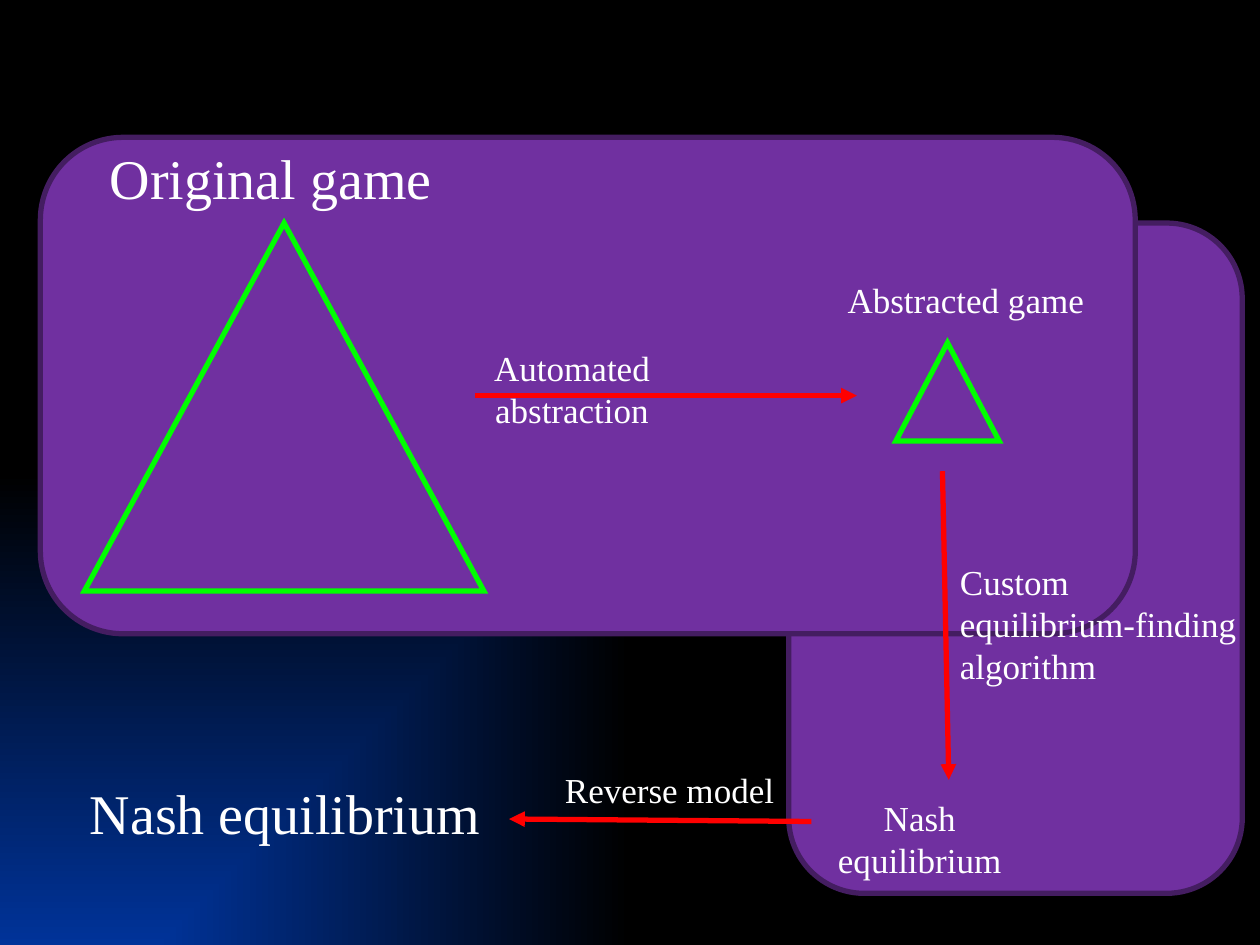
from lxml import etree
from pptx import Presentation
from pptx.dml.color import RGBColor
from pptx.enum.shapes import MSO_CONNECTOR as Connector, MSO_SHAPE as Shape
from pptx.enum.text import PP_ALIGN as Align
from pptx.oxml.ns import qn
from pptx.util import Inches, Pt

PURPLE, PLUM, GREEN, RED, WHITE = "7030A0", "441D61", "00FF00", "FF0000", "FFFFFF"


def color(hex_value):
    return RGBColor.from_string(hex_value)


def paint_background(slide):
    """Blue glow spreading from the bottom-left corner into black."""
    fill = slide.background.fill
    fill.gradient()
    for stop, position, tone in zip(fill.gradient_stops, (0, 1), ("003399", "000000")):
        stop.position = position
        stop.color.rgb = color(tone)
    gradient = slide.background._cSld.find(".//" + qn("a:gradFill"))
    linear = gradient.find(qn("a:lin"))
    glow = etree.Element(qn("a:path"), {"path": "rect"})
    etree.SubElement(glow, qn("a:fillToRect"), t="100000", r="100000")
    gradient.replace(linear, glow)


def add_outlined(slide, kind, box, line, fill=None):
    shape = slide.shapes.add_shape(kind, *map(Inches, box))
    shape.shadow.inherit = False
    if fill:
        shape.fill.solid()
        shape.fill.fore_color.rgb = color(fill)
    else:
        shape.fill.background()
    shape.line.color.rgb = color(line)
    shape.line.width = Pt(3)
    # Sharp corners
    etree.SubElement(shape.line._get_or_add_ln(), qn("a:miter"), lim="800000")


def add_panel(slide, box):
    add_outlined(slide, Shape.ROUNDED_RECTANGLE, box, PLUM, PURPLE)


def add_game_tree(slide, box):
    add_outlined(slide, Shape.ISOSCELES_TRIANGLE, box, GREEN)


def add_label(slide, box, lines, size=20, align=Align.CENTER, wrap=False):
    frame = slide.shapes.add_textbox(*map(Inches, box)).text_frame
    frame.word_wrap = wrap
    for index, line in enumerate(lines):
        paragraph = frame.add_paragraph() if index else frame.paragraphs[0]
        paragraph.alignment = align
        run = paragraph.add_run()
        run.text = line
        run.font.name = "Times New Roman"
        run.font.size = Pt(size)
        run.font.color.rgb = color(WHITE)


def add_arrow(slide, start, end):
    arrow = slide.shapes.add_connector(Connector.STRAIGHT, *map(Inches, start + end))
    arrow.line.color.rgb = color(RED)
    arrow.line.width = Pt(3)
    etree.SubElement(arrow.line._get_or_add_ln(), qn("a:tailEnd"), type="triangle")
    etree.SubElement(arrow._element.spPr, qn("a:effectLst"))


def build_game_slide(slide):
    paint_background(slide)

    # Panels behind the solving and abstraction steps
    add_panel(slide, (6.26, 1.77, 3.6, 5.32))
    add_panel(slide, (0.32, 1.09, 8.69, 3.94))

    # Games and their equilibria
    add_game_tree(slide, (0.67, 1.77, 3.17, 2.92))
    add_label(slide, (6.55, 6.27, 1.5, 0.74), ["Nash equilibrium"], wrap=True)
    add_label(slide, (0.6, 6.13, 3.33, 0.64), ["Nash equilibrium"], size=32)
    add_label(slide, (0.77, 1.09, 2.76, 0.63), ["Original game"], size=32)
    add_game_tree(slide, (7.11, 2.72, 0.82, 0.78))
    add_label(slide, (6.62, 2.16, 2.09, 0.44), ["Abstracted game"])

    # Step labels
    add_label(slide, (3.74, 2.7, 1.6, 0.74), ["Automated abstraction"], wrap=True)
    add_label(slide, (7.52, 4.4, 2.48, 1.11),
              ["Custom", "equilibrium-finding", "algorithm"], align=Align.LEFT)
    add_label(slide, (4.38, 6.05, 1.87, 0.44), ["Reverse model"])

    # Steps: abstract, solve, map back
    add_arrow(slide, (3.77, 3.14), (6.8, 3.14))
    add_arrow(slide, (7.48, 3.74), (7.53, 6.19))
    add_arrow(slide, (6.44, 6.52), (4.04, 6.5))


def main():
    deck = Presentation()
    deck.slide_width, deck.slide_height = Inches(10), Inches(7.5)
    build_game_slide(deck.slides.add_slide(deck.slide_layouts[6]))
    deck.save("out.pptx")


if __name__ == "__main__":
    main()
